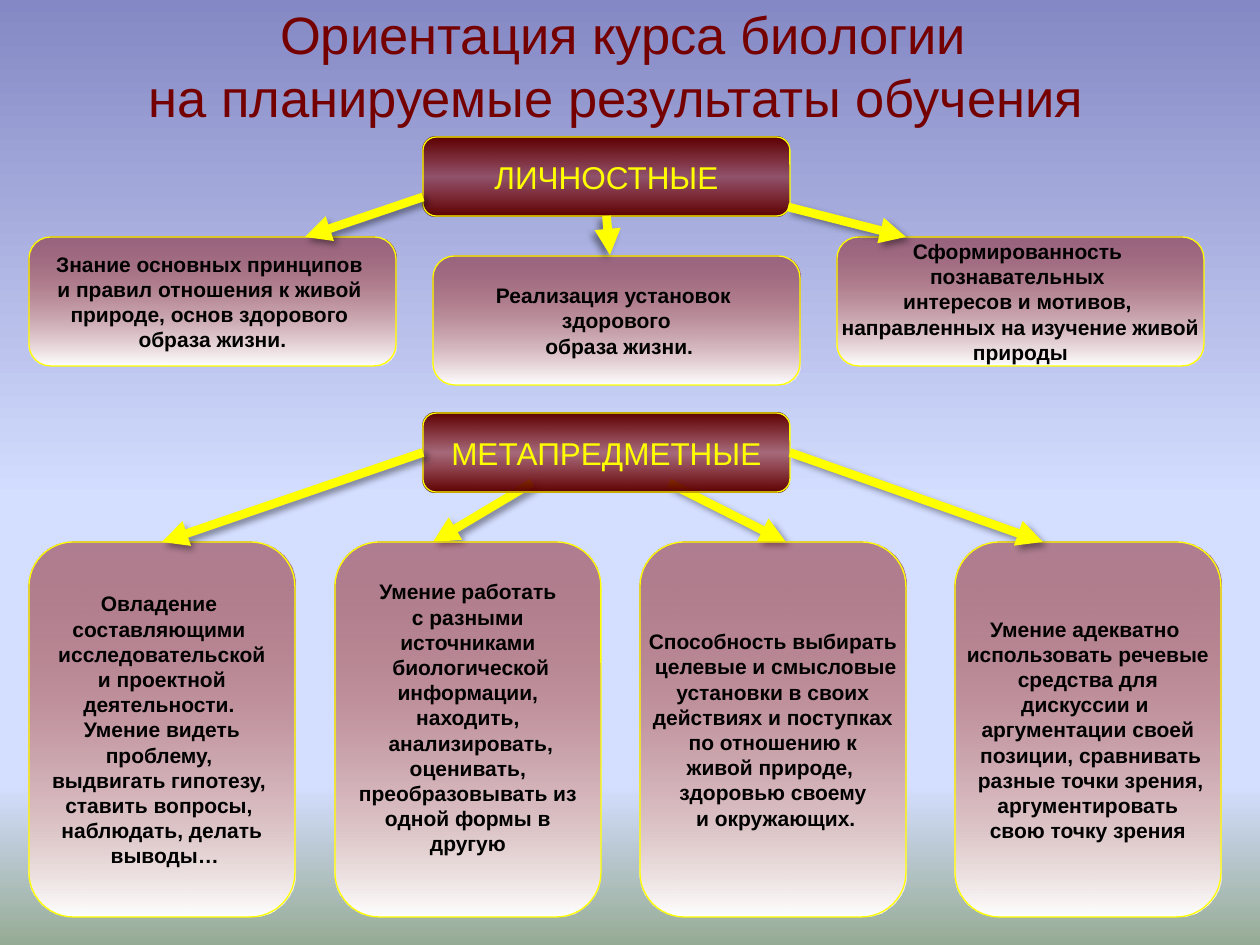
import pptx
import pptx.dml.color
import pptx.enum.shapes
import pptx.enum.text
import pptx.oxml
import pptx.oxml.ns
import pptx.util

RGB = pptx.dml.color.RGBColor
SHAPE = pptx.enum.shapes.MSO_SHAPE
SCALE = 914400 / 126
FONT = "Arial"
YELLOW = RGB(0xFF, 0xFF, 0x00)
BLACK = RGB(0x00, 0x00, 0x00)
WHITE = RGB(0xFF, 0xFF, 0xFF)
WINE = RGB(0x74, 0x00, 0x00)
MAROON = RGB(0x80, 0x00, 0x00)
DARK = RGB(0x5C, 0x00, 0x00)
DUSK = RGB(0x84, 0x88, 0xC4)
SKY = RGB(0xD4, 0xDE, 0xFF)
GRASS = RGB(0x96, 0xAB, 0x94)

# Gradient stops: position %, colour, opacity %
BACK = [(0, DUSK, 100), (53, SKY, 100), (83, SKY, 100), (100, GRASS, 100)]
HEAD = [(0, DARK, 100), (50, MAROON, 50), (100, DARK, 100)]
CARD = [(0, MAROON, 43), (100, WHITE, 100)]

TOP = [
    (29, 237, ["Знание основных принципов ", "и правил отношения к живой ",
               "природе, основ здорового ", "образа жизни."]),
    (433, 256, ["Реализация установок ", "здорового", " образа жизни."]),
    (837, 237, ["Сформированность ", "познавательных ", "интересов и мотивов, ",
                "направленных на изучение живой", "природы"]),
]
LOW = [
    (29, 6, ["Овладение ", "составляющими ", "исследовательской", " и проектной ",
             "деятельности. ", " Умение видеть ", "проблему, ",
             "выдвигать гипотезу, ", "ставить вопросы, ", "наблюдать, делать",
             " выводы…"]),
    (335, 30, ["Умение работать", " с разными ", "источниками", " биологической",
               " информации, ", "находить,", " анализировать,", " оценивать, ",
               "преобразовывать из", " одной формы в ", "другую"]),
    (640, 6, ["Способность выбирать", " целевые и смысловые", " установки в своих ",
              "действиях и поступках", " по отношению к ", "живой природе, ",
              "здоровью своему", " и окружающих."]),
    (955, 6, ["Умение адекватно ", "использовать речевые", " средства для ",
              "дискуссии и ", "аргументации своей", " позиции, сравнивать",
              " разные точки зрения,", " аргументировать ", "свою точку зрения"]),
]


def px(*nums):
    return [pptx.util.Emu(round(n * SCALE)) for n in nums]


def node(tag, inner=""):
    """Parse one DrawingML element, given its tag with attributes."""
    name = tag.split()[0]
    space = pptx.oxml.ns.nsdecls("a")
    return pptx.oxml.parse_xml(f"<a:{tag} {space}>{inner}</a:{name}>")


def shade(fill, root, stops):
    """Give a fill a top-to-bottom gradient with the given stops."""
    fill.gradient()
    fill.gradient_angle = 270
    area = root.find(".//" + pptx.oxml.ns.qn("a:gsLst"))
    for old in list(area):
        area.remove(old)
    for spot, color, alpha in stops:
        area.append(node(
            f'gs pos="{spot * 1000}"',
            f'<a:srgbClr val="{color}"><a:alpha val="{alpha * 1000}"/></a:srgbClr>'))


def write(frame, lines, size=12, color=BLACK, bold=False, wrap=False, foot=6):
    frame.word_wrap = wrap
    frame.vertical_anchor = pptx.enum.text.MSO_ANCHOR.MIDDLE
    frame.margin_bottom = px(foot)[0]
    for i, line in enumerate(lines):
        para = frame.paragraphs[0] if i == 0 else frame.add_paragraph()
        para.alignment = pptx.enum.text.PP_ALIGN.CENTER
        run = para.add_run()
        run.text = line
        run.font.name = FONT
        run.font.size = pptx.util.Pt(size)
        run.font.bold = bold
        run.font.color.rgb = color


class Board:
    def __init__(self, deck):
        self.slide = deck.slides.add_slide(deck.slide_layouts[6])
        self.shapes = self.slide.shapes
        shade(self.slide.background.fill, self.slide.element, BACK)

    def title(self, box, lines):
        write(self.shapes.add_textbox(*px(*box)).text_frame, lines,
              size=30, color=WINE, wrap=True)

    def panel(self, box, stops, lines, **style):
        shape = self.shapes.add_shape(SHAPE.ROUNDED_RECTANGLE, *px(*box))
        shape.adjustments[0] = 0.167
        shape.shadow.inherit = False
        shade(shape.fill, shape.element, stops)
        shape.line.color.rgb = YELLOW
        shape.line.width = pptx.util.Pt(0.75)
        write(shape.text_frame, lines, **style)
        return shape

    def head(self, y, text):
        return self.panel((423, y, 367, 79), HEAD, [text], size=18, color=YELLOW)

    def card(self, box, lines, foot=6):
        return self.panel(box, CARD, lines, bold=True, foot=foot)

    def arrow(self, ends, begin=None, end=None, turn=45):
        """Draw an arrow; begin and end are (shape, site) joints."""
        link = self.shapes.add_connector(
            pptx.enum.shapes.MSO_CONNECTOR.STRAIGHT, *px(*ends))
        if begin:
            link.begin_connect(*begin)
        if end:
            link.end_connect(*end)
        link.line.color.rgb = YELLOW
        link.line.width = pptx.util.Pt(5)
        link.line._get_or_add_ln().append(node('tailEnd type="triangle"'))
        link.element.spPr.append(node(
            "effectLst",
            f'<a:outerShdw blurRad="50800" dist="38100" dir="{turn * 60000}">'
            f'<a:srgbClr val="{BLACK}"><a:alpha val="40000"/></a:srgbClr>'
            "</a:outerShdw>"))


def main():
    deck = pptx.Presentation()
    deck.slide_width, deck.slide_height = px(1260, 945)
    board = Board(deck)

    # The inner arrows lie behind the second heading
    board.arrow((669, 483, 786, 542))
    board.arrow((532, 483, 433, 542))
    board.title((88, 0, 1071, 129),
                ["Ориентация курса биологии", "на планируемые результаты обучения "])

    own = board.head(137, "ЛИЧНОСТНЫЕ")
    for x, y, lines in TOP:
        board.card((x, y, 367, 129), lines)
    board.arrow((788, 207, 906, 237))
    board.arrow((423, 197, 305, 237))
    board.arrow((607, 216, 610, 255), begin=(own, 2), turn=135)

    meta = board.head(413, "МЕТАПРЕДМЕТНЫЕ")
    cards = [board.card((x, 542, 266, 375), lines, foot) for x, foot, lines in LOW]
    board.arrow((790, 453, 1043, 542), begin=(meta, 3))
    board.arrow((423, 453, 162, 542), begin=(meta, 1), end=(cards[0], 0))

    deck.save("out.pptx")


if __name__ == "__main__":
    main()
